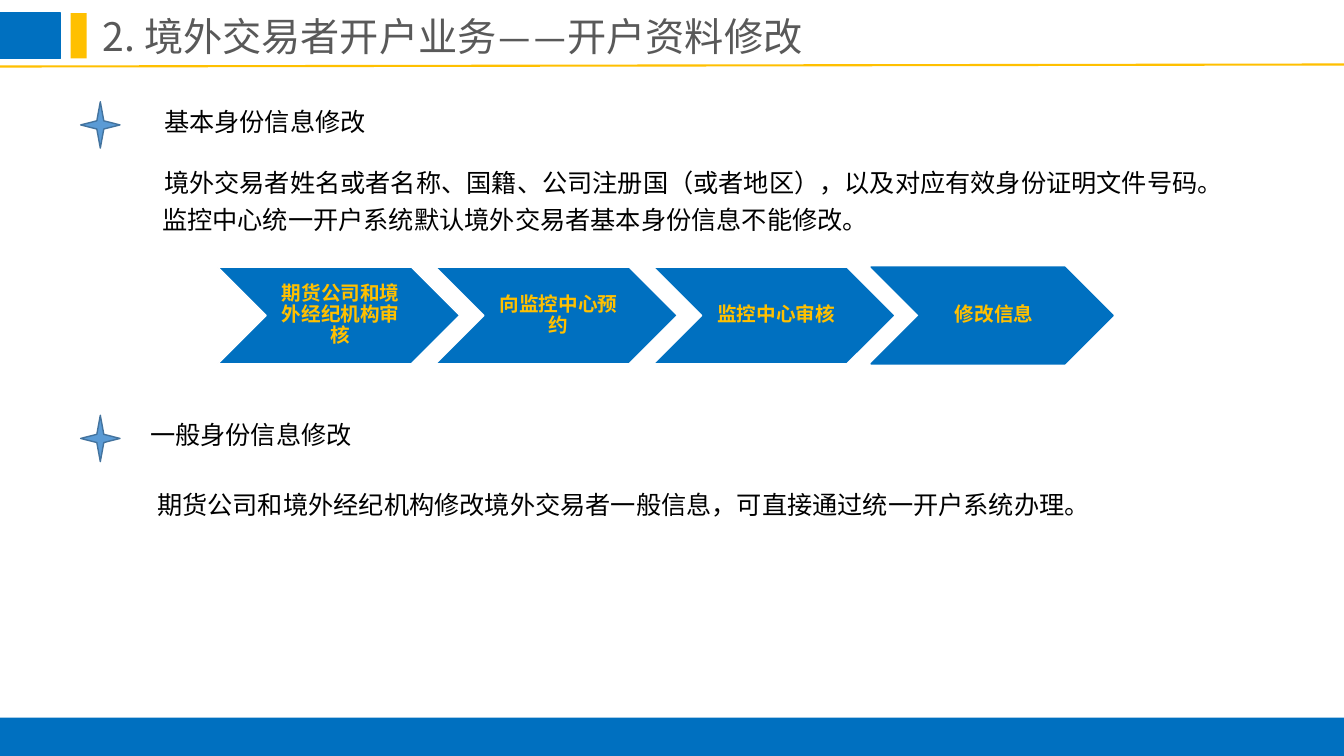
from dataclasses import dataclass

from lxml.etree import SubElement
from pptx import Presentation
from pptx.dml.color import RGBColor
from pptx.enum.shapes import MSO_CONNECTOR, MSO_SHAPE
from pptx.enum.text import MSO_ANCHOR, PP_ALIGN
from pptx.oxml.ns import qn
from pptx.util import Inches, Pt

BLUE = RGBColor(0x00, 0x70, 0xC0)
GOLD = RGBColor(0xFF, 0xC0, 0x00)
GREY = RGBColor(0x59, 0x59, 0x59)
BLACK = RGBColor(0x00, 0x00, 0x00)
WHITE = RGBColor(0xFF, 0xFF, 0xFF)
STAR_FILL = RGBColor(0x5B, 0x9B, 0xD5)
STAR_LINE = RGBColor(0x43, 0x73, 0x9E)
LATIN = "Calibri"
CHINESE = "Noto Sans CJK SC"


@dataclass(frozen=True)
class Area:
    left: float
    top: float
    width: float
    height: float

    def lengths(self) -> tuple:
        return tuple(map(Inches, (self.left, self.top, self.width, self.height)))


@dataclass(frozen=True)
class Figure:
    kind: MSO_SHAPE
    area: Area
    fill: RGBColor
    line: RGBColor | None = None


@dataclass(frozen=True)
class Passage:
    area: Area
    lines: tuple[str, ...]
    font: str = LATIN
    gap: float = 0
    indent: float = 0
    spacing: float | None = None


@dataclass(frozen=True)
class Step:
    text: str
    line: RGBColor = WHITE


FIGURES = [
    Figure(MSO_SHAPE.RECTANGLE, Area(0, 0.13, 0.6, 0.45), BLUE, BLUE),
    Figure(MSO_SHAPE.RECTANGLE, Area(0.7, 0.13, 0.16, 0.45), GOLD),
    Figure(MSO_SHAPE.RECTANGLE, Area(0, 7.12, 13.33, 0.38), BLUE),
] + [
    Figure(MSO_SHAPE.STAR_4_POINT, Area(0.8, top, 0.39, 0.46), STAR_FILL, STAR_LINE)
    for top in (1.01, 4.12)
]
PASSAGES = [
    Passage(
        Area(1.53, 1.01, 11.44, 1.01),
        (
            "基本身份信息修改",
            "境外交易者姓名或者名称、国籍、公司注册国（或者地区），以及对应有效身份证明文件号码。",
        ),
        gap=22,
    ),
    Passage(
        Area(1.51, 1.98, 9.53, 0.4),
        ("监控中心统一开户系统默认境外交易者基本身份信息不能修改。",),
        font=CHINESE,
    ),
    Passage(Area(1.39, 4.11, 2.96, 0.4), ("一般身份信息修改",)),
    Passage(
        Area(1.02, 4.72, 10.05, 0.49),
        ("期货公司和境外经纪机构修改境外交易者一般信息，可直接通过统一开户系统办理。",),
        font=CHINESE,
        indent=0.44,
        spacing=28,
    ),
]
STEPS = [
    Step("期货公司和境外经纪机构审核"),
    Step("向监控中心预约"),
    Step("监控中心审核"),
    Step("修改信息", BLUE),
]


def style(paragraph, size: float, color: RGBColor, name: str, bold: bool = False) -> None:
    """Set the paragraph font; East Asian text takes Calibri line heights."""
    font = paragraph.font
    font.size, font.bold, font.name = Pt(size), bold, name
    font.color.rgb = color
    properties = paragraph._p.pPr.find(qn("a:defRPr"))
    SubElement(properties, qn("a:ea")).set("typeface", LATIN)


def add_figure(shapes, figure: Figure) -> None:
    shape = shapes.add_shape(figure.kind, *figure.area.lengths())
    shape.shadow.inherit = False
    shape.fill.solid()
    shape.fill.fore_color.rgb = figure.fill
    if figure.line is None:
        shape.line.fill.background()
    else:
        shape.line.color.rgb = figure.line
        shape.line.width = Pt(1)


def add_passage(shapes, passage: Passage) -> None:
    frame = shapes.add_textbox(*passage.area.lengths()).text_frame
    frame.word_wrap = True
    frame.text = "\n".join(passage.lines)
    for index, paragraph in enumerate(frame.paragraphs):
        style(paragraph, 18, BLACK, passage.font)
        if index:
            paragraph.space_before = Pt(passage.gap)
        if passage.indent:
            paragraph.alignment = PP_ALIGN.JUSTIFY
            paragraph._p.pPr.set("indent", str(Inches(passage.indent)))
        if passage.spacing:
            paragraph.line_spacing = Pt(passage.spacing)


def add_step(shapes, step: Step, left: float) -> None:
    add_figure(shapes, Figure(MSO_SHAPE.CHEVRON, Area(left, 2.65, 2.4, 0.96), BLUE, step.line))
    box = shapes.add_textbox(*Area(left + 0.48, 2.65, 1.44, 0.96).lengths())
    frame = box.text_frame
    frame.word_wrap = True
    frame.vertical_anchor = MSO_ANCHOR.MIDDLE
    frame.margin_left = Inches(0.06)
    frame.margin_right = frame.margin_top = frame.margin_bottom = Inches(0.02)
    frame.text = step.text
    paragraph = frame.paragraphs[0]
    paragraph.alignment = PP_ALIGN.CENTER
    paragraph.line_spacing = 0.9
    style(paragraph, 14, GOLD, LATIN, bold=True)


def add_title(page) -> None:
    title = page.shapes.title
    title.left, title.top, title.width, title.height = Area(0.92, 0.07, 10.36, 0.57).lengths()
    frame = title.text_frame
    frame.word_wrap = True
    frame.vertical_anchor = MSO_ANCHOR.TOP
    frame.text = "2. 境外交易者开户业务——开户资料修改"
    paragraph = frame.paragraphs[0]
    paragraph.alignment = PP_ALIGN.LEFT
    style(paragraph, 28, GREY, CHINESE)


def add_title_rule(shapes) -> None:
    rule = shapes.add_connector(
        MSO_CONNECTOR.STRAIGHT, Inches(-0.01), Inches(0.66), Inches(13.33), Inches(0.64)
    )
    rule.line.color.rgb = GOLD
    rule.line.width = Pt(1.5)
    SubElement(rule._element.spPr, qn("a:effectLst"))


def main() -> None:
    deck = Presentation()
    deck.slide_width, deck.slide_height = Inches(13.33), Inches(7.5)
    page = deck.slides.add_slide(deck.slide_layouts[5])
    add_title(page)
    add_title_rule(page.shapes)
    for figure in FIGURES:
        add_figure(page.shapes, figure)
    for passage in PASSAGES:
        add_passage(page.shapes, passage)
    process = page.shapes.add_group_shape()
    for index, step in enumerate(STEPS):
        add_step(process.shapes, step, 2.16 + 2.16 * index)
    deck.save("out.pptx")


if __name__ == "__main__":
    main()
